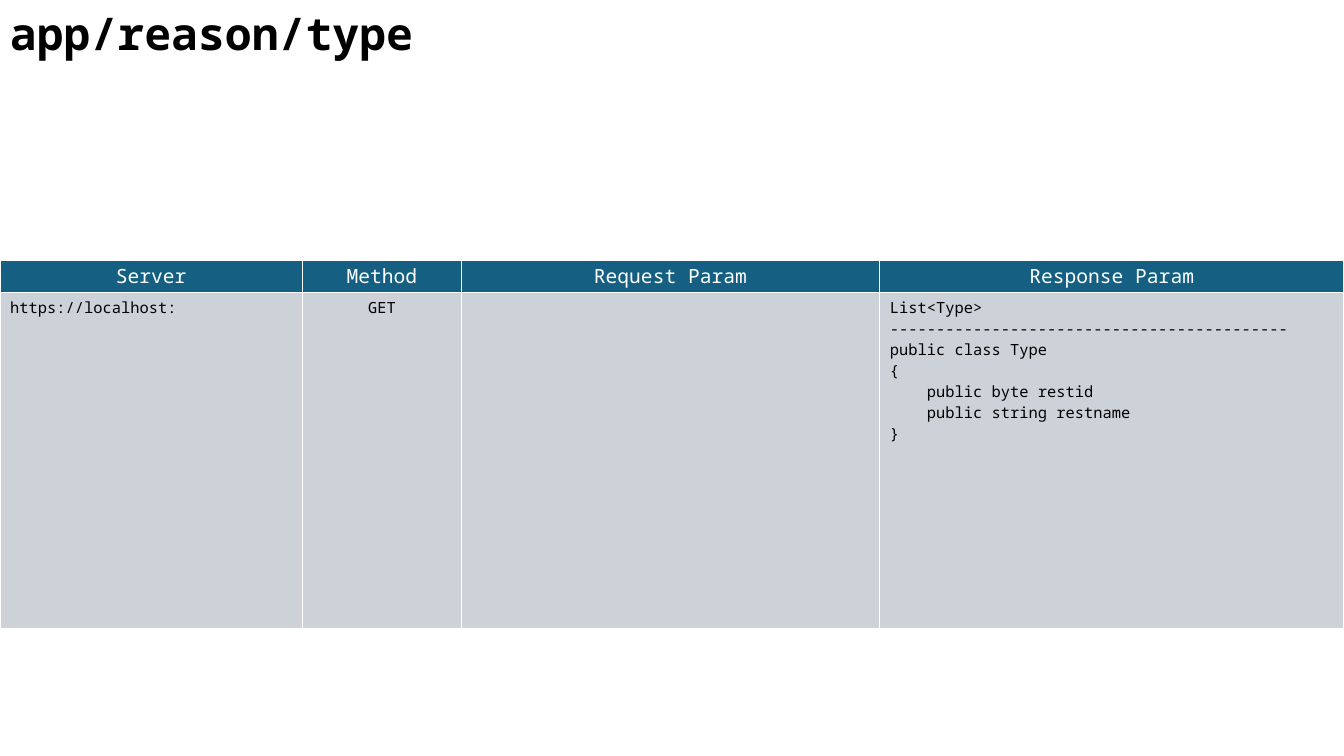
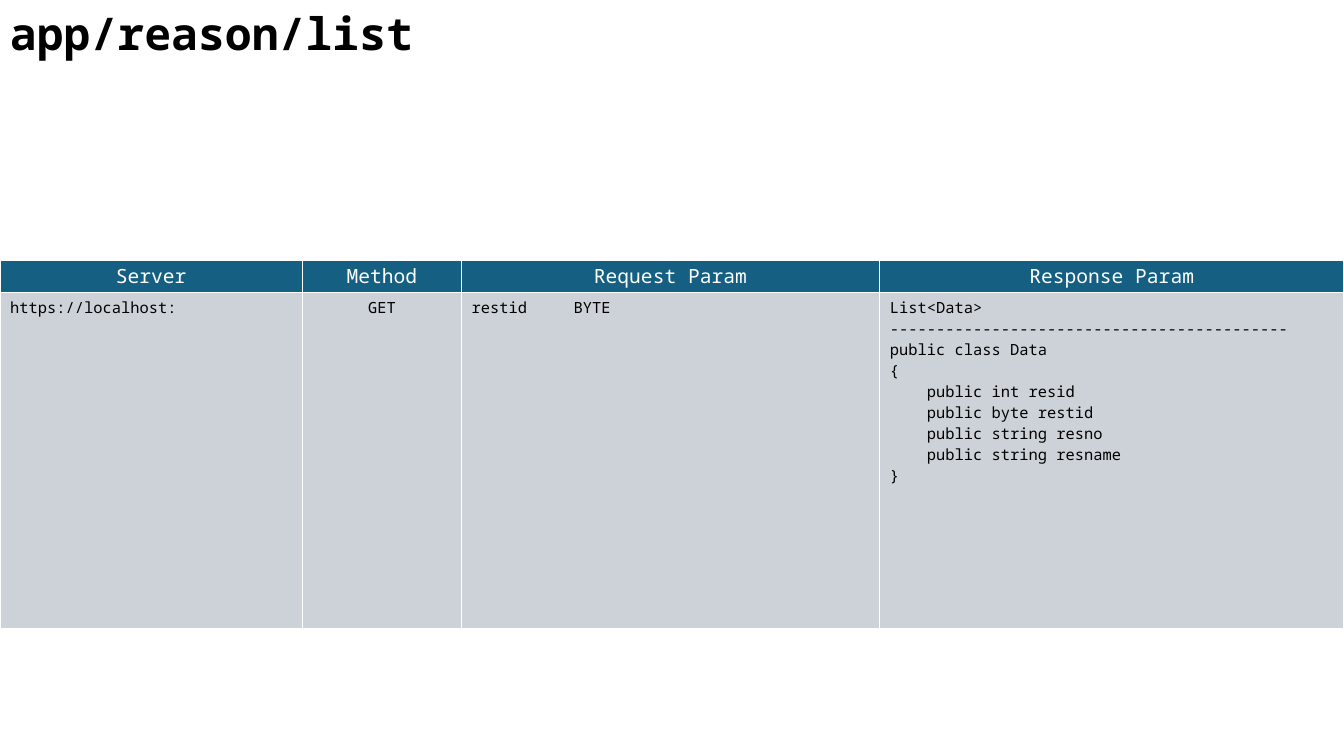
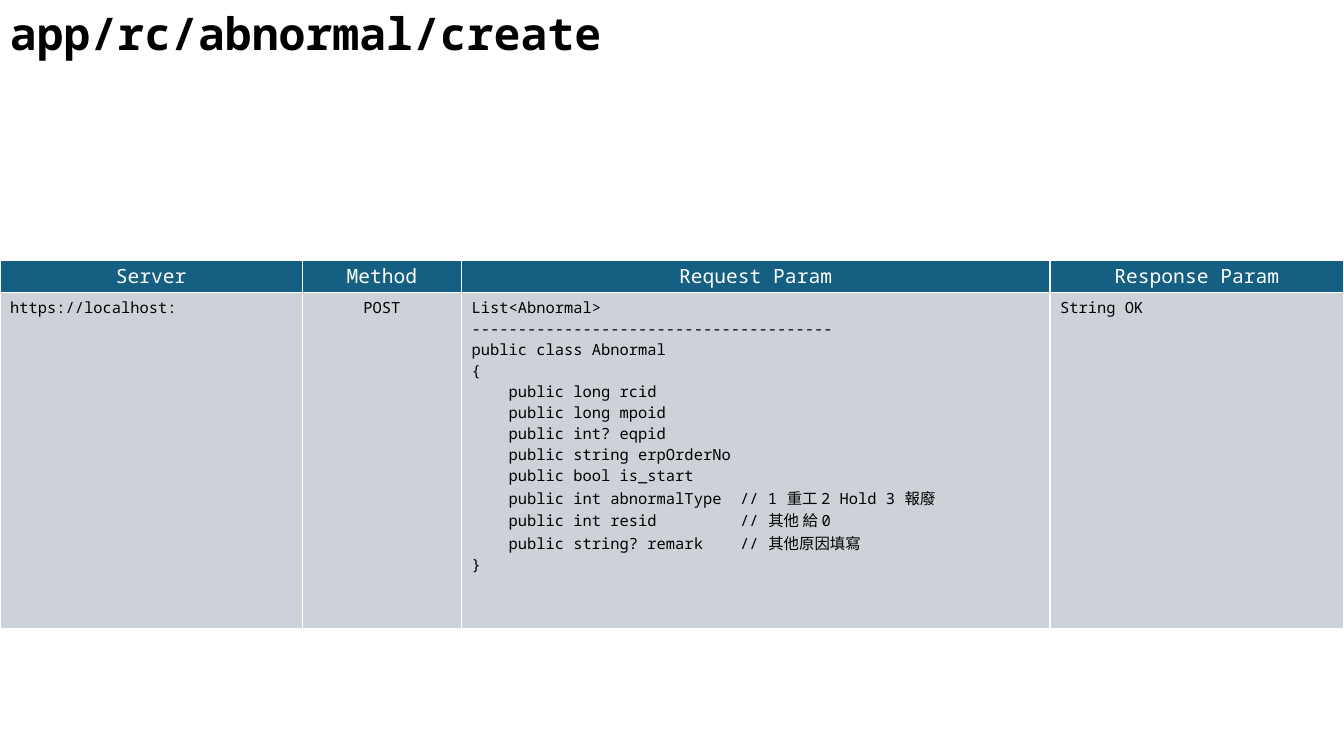
"""Build three slides that describe the endpoints of an app."""
import pptx
import pptx.dml.color
import pptx.enum.text
import pptx.oxml
import pptx.oxml.ns
import pptx.util
from lxml import etree

Cm = pptx.util.Cm
Pt = pptx.util.Pt
Align = pptx.enum.text.PP_ALIGN
Anchor = pptx.enum.text.MSO_ANCHOR
qn = pptx.oxml.ns.qn

WIDE, HIGH = 33.87, 19.05
HEADS = ["Server", "Method", "Request Param", "Response Param"]
HOST = "https://localhost:"


class Deck:
    font = "Noto Sans Mono"
    hues = {"ink": "000000", "paper": "FFFFFF", "head": "156082", "body": "CCD2D8"}

    def __init__(self):
        self.file = pptx.Presentation()
        self.file.slide_width = Cm(WIDE)
        self.file.slide_height = Cm(HIGH)
        self.slide = None

    def hue(self, name):
        return pptx.dml.color.RGBColor.from_string(self.hues[name])

    def style(self, frame, size, hue, bold=False, align=Align.LEFT):
        for para in frame.paragraphs:
            para.alignment = align
            for run in para.runs:
                run.font.name = self.font
                run.font.size = Pt(size)
                run.font.bold = bold
                run.font.color.rgb = self.hue(hue)

    def page(self, title):
        self.slide = self.file.slides.add_slide(self.file.slide_layouts[6])
        box = self.slide.shapes.add_textbox(0, 0, Cm(24), Cm(1.63))
        frame = box.text_frame
        frame.word_wrap = True
        frame.vertical_anchor = Anchor.MIDDLE
        frame.margin_top = frame.margin_bottom = Cm(0.04)
        frame.text = title
        self.style(frame, 32, "ink", bold=True)

    def edge(self, cell):
        props = cell._tc.get_or_add_tcPr()
        for side in ("lnL", "lnR", "lnT", "lnB"):
            line = etree.SubElement(props, qn("a:" + side), w=str(Pt(1)))
            fill = etree.SubElement(line, qn("a:solidFill"))
            etree.SubElement(fill, qn("a:srgbClr"), val=self.hues["paper"])

    def tab(self, para, stop):
        props = para._p.get_or_add_pPr()
        stops = etree.SubElement(props, qn("a:tabLst"))
        etree.SubElement(stops, qn("a:tab"), pos=str(Cm(stop)), algn="l")

    def cell(self, cell, text, fill, size, hue, align):
        self.edge(cell)
        cell.fill.solid()
        cell.fill.fore_color.rgb = self.hue(fill)
        cell.text_frame.text = text
        for para in cell.text_frame.paragraphs:
            if "\t" in para.text:
                self.tab(para, 2.57)
        self.style(cell.text_frame, size, hue, align=align)

    def table(self, texts, ask):
        cols = [7.62, 4.01, ask]
        cols.append(WIDE - sum(cols))
        rows = [0.82, 8.46]
        frame = self.slide.shapes.add_table(
            2, len(cols), 0, Cm(6.55), Cm(WIDE), Cm(sum(rows)))
        grid = frame.table
        for row, high in zip(grid.rows, rows):
            row.height = Cm(high)
        for i, wide in enumerate(cols):
            grid.columns[i].width = Cm(wide)
            head, body = grid.cell(0, i), grid.cell(1, i)
            head.margin_top = head.margin_bottom = Cm(0.07)
            self.cell(head, HEADS[i], "head", 14, "paper", Align.CENTER)
            align = Align.CENTER if HEADS[i] == "Method" else Align.LEFT
            self.cell(body, texts[i], "body", 11, "ink", align)


def model(name, dashes, fields):
    lines = [f"List<{name}>", "-" * dashes, f"public class {name}", "{"]
    lines += [f"    public {field}" for field in fields]
    return "\n".join(lines + ["}"])


def main():
    kind = model("Type", 43, ["byte restid", "string restname"])
    data = model("Data", 43, [
        "int resid", "byte restid", "string resno", "string resname"])
    fault = model("Abnormal", 39, [
        "long rcid", "long mpoid", "int? eqpid", "string erpOrderNo",
        "bool is_start",
        "int abnormalType  // 1 重工 2 Hold 3 報廢",
        "int resid         // 其他 給 0",
        "string? remark    // 其他原因填寫"])
    pages = [
        ("app/reason/type", "GET", "", kind, 10.54),
        ("app/reason/list", "GET", "restid\tBYTE", data, 10.54),
        ("app/rc/abnormal/create", "POST", fault, "String OK", 14.83),
    ]
    deck = Deck()
    for title, verb, ask, reply, wide in pages:
        deck.page(title)
        deck.table([HOST, verb, ask, reply], wide)
    deck.file.save("out.pptx")


if __name__ == "__main__":
    main()
